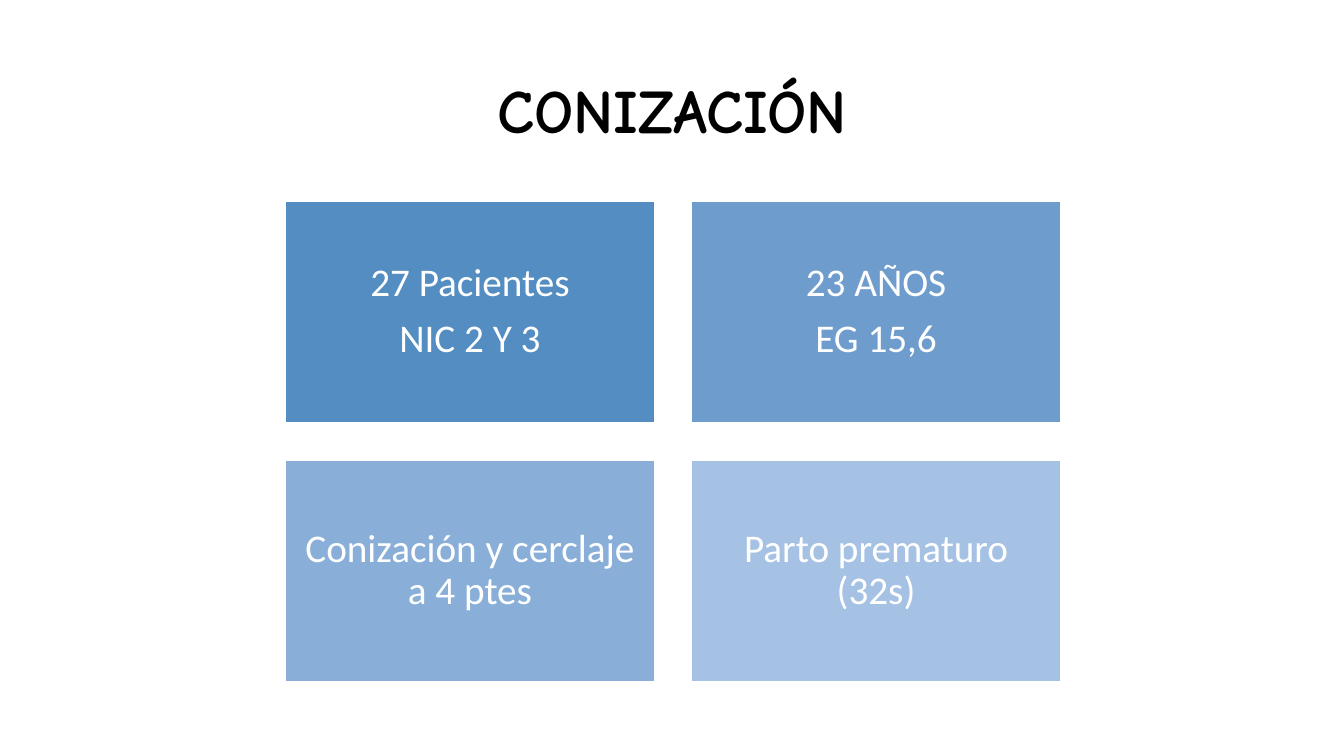
from dataclasses import dataclass

from pptx import Presentation
from pptx.dml.color import RGBColor
from pptx.enum import shapes, text
from pptx.util import Pt


@dataclass(frozen=True)
class Theme:
    ink: str = "000000"
    white: str = "FFFFFF"
    blues: tuple = ("538DC1", "6E9DCD", "89AFD8", "A5C1E3")
    head: str = "Comic Neue"
    body: str = "Calibri"
    big: int = 44
    mid: int = 28


THEME = Theme()

CARDS = (
    ("27 Pacientes", "NIC 2 Y 3"),
    ("23 AÑOS", "EG 15,6"),
    ("Conización y cerclaje a 4 ptes",),
    ("Parto prematuro (32s)",),
)

# Card grid, in points
LEFT, TOP = 204, 144
WIDE, HIGH = 263.3, 158
GAP = 26.8
INSET = 8.4


def style(para, face, size, color, bold=False):
    para.alignment = text.PP_ALIGN.CENTER
    para.line_spacing = 0.9
    font = para.font
    font.name, font.size, font.bold = face, Pt(size), bold
    font.color.rgb = RGBColor.from_string(color)


def add_title(slide, words):
    title = slide.shapes.title
    title.left, title.top = Pt(66), Pt(28.75)
    title.width, title.height = Pt(828), Pt(104.4)
    frame = title.text_frame
    frame.text = words
    frame.vertical_anchor = text.MSO_ANCHOR.MIDDLE
    style(frame.paragraphs[0], THEME.head, THEME.big, THEME.ink, bold=True)


def add_card(slide, row, col, fill, lines):
    card = slide.shapes.add_shape(
        shapes.MSO_SHAPE.RECTANGLE,
        Pt(LEFT + col * (WIDE + GAP)), Pt(TOP + row * (HIGH + GAP)),
        Pt(WIDE), Pt(HIGH))
    card.shadow.inherit = False
    card.fill.solid()
    card.fill.fore_color.rgb = RGBColor.from_string(fill)
    card.line.color.rgb = RGBColor.from_string(THEME.white)
    card.line.width = Pt(1)

    frame = card.text_frame
    frame.word_wrap = True
    frame.vertical_anchor = text.MSO_ANCHOR.MIDDLE
    frame.margin_left = frame.margin_right = Pt(INSET)
    frame.margin_top = frame.margin_bottom = Pt(INSET)
    frame.text = "\n".join(lines)
    for para in frame.paragraphs:
        style(para, THEME.body, THEME.mid, THEME.white)
        para.space_after = Pt(9.8)


def main():
    deck = Presentation()
    deck.slide_width, deck.slide_height = Pt(960), Pt(540)
    slide = deck.slides.add_slide(deck.slide_layouts[5])  # title only

    add_title(slide, "CONIZACIÓN")

    # Two cards to a row
    for i, (fill, lines) in enumerate(zip(THEME.blues, CARDS)):
        row, col = divmod(i, 2)
        add_card(slide, row, col, fill, lines)

    deck.save("out.pptx")


if __name__ == "__main__":
    main()
